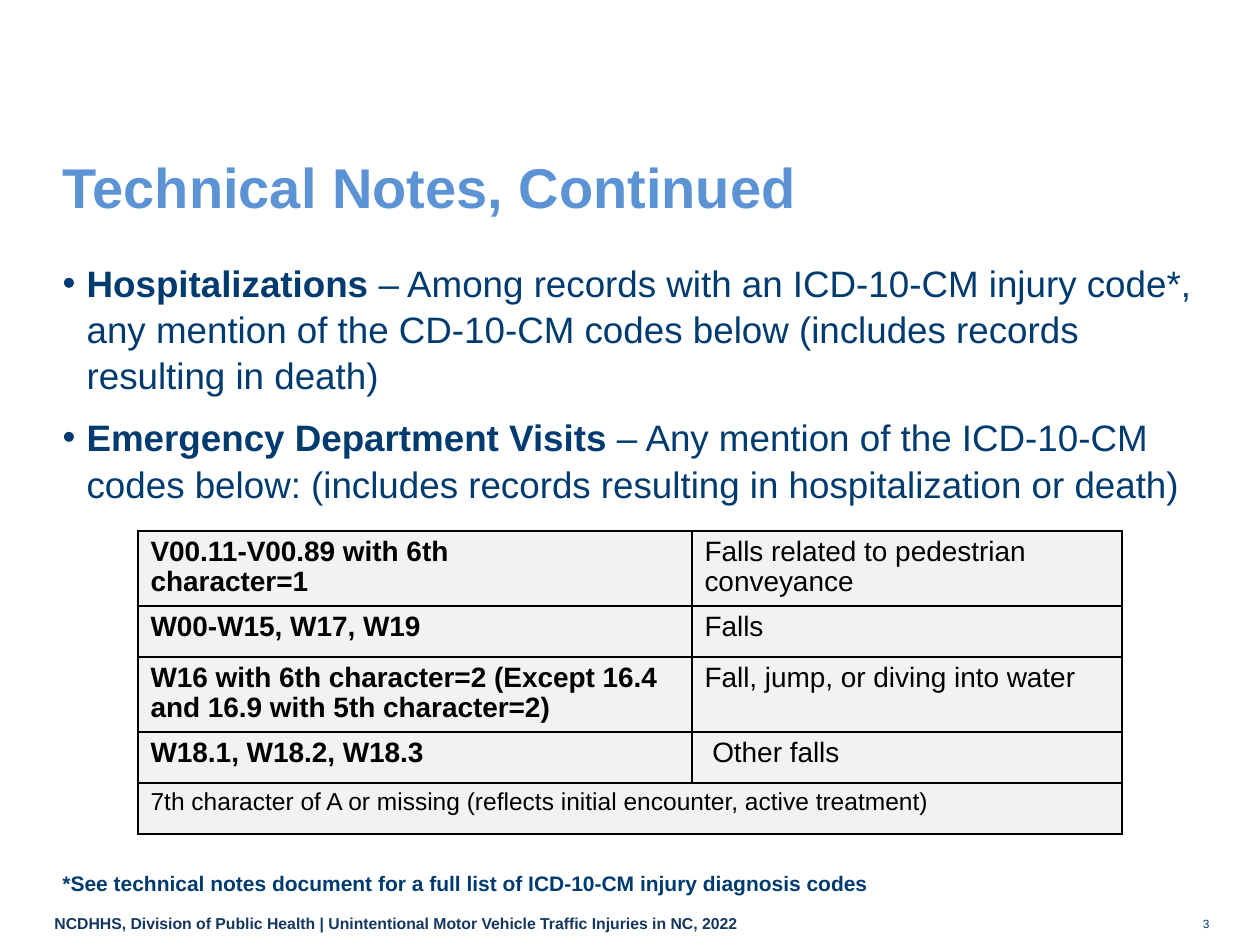
import pptx
import pptx.dml.color
import pptx.enum.text
import pptx.oxml.ns
import pptx.util
import lxml.etree

PIXELS_PER_INCH = 126
FONT = "Arial"
NAVY = pptx.dml.color.RGBColor(0x00, 0x3B, 0x70)
FOOTER_NAVY = pptx.dml.color.RGBColor(0x15, 0x36, 0x5E)
SKY = pptx.dml.color.RGBColor(0x5C, 0x93, 0xD5)
BLACK = pptx.dml.color.RGBColor(0x00, 0x00, 0x00)
PALE_GRAY = pptx.dml.color.RGBColor(0xF2, 0xF2, 0xF2)
ALIGN = pptx.enum.text.PP_ALIGN
ANCHOR = pptx.enum.text.MSO_ANCHOR


def px(length):
    return round(length * pptx.util.Inches(1) / PIXELS_PER_INCH)


def add_element(parent, tag, **attributes):
    element = lxml.etree.SubElement(parent, pptx.oxml.ns.qn(tag))
    for name, value in attributes.items():
        element.set(name, str(value))
    return element


def write_paragraph(paragraph, runs, size, color=NAVY, align=ALIGN.LEFT,
                    line_spacing=None, space_before=0, bullet_indent=None):
    """Fill a paragraph with (text, bold) runs."""
    paragraph.alignment = align
    paragraph.space_before = pptx.util.Pt(space_before)
    if line_spacing:
        paragraph.line_spacing = line_spacing
    if bullet_indent:
        properties = paragraph._p.get_or_add_pPr()
        properties.set("marL", str(px(bullet_indent)))
        properties.set("indent", str(-px(bullet_indent)))
        add_element(properties, "a:buFont", typeface=FONT)
        add_element(properties, "a:buChar", char="•")
    for text, bold in runs:
        run = paragraph.add_run()
        run.text = text
        run.font.name = FONT
        run.font.size = pptx.util.Pt(size)
        run.font.bold = bold
        run.font.color.rgb = color


class SlideBuilder:
    def __init__(self, presentation):
        self.slide = presentation.slides.add_slide(presentation.slide_layouts[1])

    def fill_frame(self, shape, paragraphs, anchor, space_between=0, **style):
        frame = shape.text_frame
        frame.word_wrap = True
        frame.auto_size = pptx.enum.text.MSO_AUTO_SIZE.NONE
        frame.vertical_anchor = anchor
        for index, runs in enumerate(paragraphs):
            paragraph = frame.add_paragraph() if index else frame.paragraphs[0]
            write_paragraph(paragraph, runs, space_before=space_between if index else 0, **style)

    def placeholder(self, number, box, paragraphs, anchor=ANCHOR.TOP, **style):
        shape = self.slide.placeholders[number]
        shape.left, shape.top, shape.width, shape.height = map(px, box)
        self.fill_frame(shape, paragraphs, anchor, **style)

    def text(self, box, text, bold=True, anchor=ANCHOR.TOP, **style):
        shape = self.slide.shapes.add_textbox(*map(px, box))
        self.fill_frame(shape, [[(text, bold)]], anchor, **style)

    def table(self, left, top, widths, heights, rows, note):
        shape = self.slide.shapes.add_table(
            len(heights), len(widths), px(left), px(top), px(sum(widths)), px(sum(heights)))
        table = shape.table
        table.first_row = table.horz_banding = False
        for column, width in zip(table.columns, widths):
            column.width = px(width)
        for row, height in zip(table.rows, heights):
            row.height = px(height)
        for row_index, row in enumerate(rows):
            for column_index, lines in enumerate(row):
                self.cell(table.cell(row_index, column_index), lines, column_index == 0, 16)
        # The note spans the whole last row
        last = len(rows)
        table.cell(last, 0).merge(table.cell(last, len(widths) - 1))
        self.cell(table.cell(last, 0), [note], False, 14)
        self.cell(table.cell(last, 1), [], False, 14)

    def cell(self, cell, lines, bold, size):
        properties = cell._tc.get_or_add_tcPr()
        for side in ("L", "R", "T", "B"):
            line = add_element(properties, f"a:ln{side}", w=pptx.util.Pt(1))
            add_element(add_element(line, "a:solidFill"), "a:srgbClr", val=BLACK)
        cell.fill.solid()
        cell.fill.fore_color.rgb = PALE_GRAY
        for index, line in enumerate(lines):
            frame = cell.text_frame
            paragraph = frame.add_paragraph() if index else frame.paragraphs[0]
            write_paragraph(paragraph, [(line, bold)], size, color=BLACK, line_spacing=0.97)


def main():
    presentation = pptx.Presentation()
    presentation.slide_width = pptx.util.Inches(10)
    presentation.slide_height = pptx.util.Inches(7.5)
    builder = SlideBuilder(presentation)

    # Title and definitions
    builder.placeholder(0, (50, 151, 1181, 76), [[("Technical Notes, Continued", True)]],
                        anchor=ANCHOR.BOTTOM, size=32, color=SKY, line_spacing=0.9)
    definitions = [
        [("Hospitalizations ", True),
         ("– Among records with an ICD-10-CM injury code*, any mention of the CD-10-CM "
          "codes below (includes records resulting in death)", False)],
        [("Emergency Department Visits ", True),
         ("– Any mention of the ICD-10-CM codes below: (includes records resulting in "
          "hospitalization or death)", False)],
    ]
    builder.placeholder(1, (50, 252, 1181, 571), definitions, size=21,
                        line_spacing=1.05, space_between=9, bullet_indent=24)

    # Injury code table
    codes = [
        (["V00.11-V00.89 with 6th", "character=1"], ["Falls related to pedestrian conveyance"]),
        (["W00-W15, W17, W19"], ["Falls"]),
        (["W16 with 6th character=2 (Except 16.4 and 16.9 with 5th character=2)"],
         ["Fall, jump, or diving into water"]),
        (["W18.1, W18.2, W18.3"], [" Other falls"]),
    ]
    builder.table(138, 531, (554, 430), (75, 51, 75, 51, 51), codes,
                  "7th character of A or missing (reflects initial encounter, active treatment)")

    # Footnote, footer and slide number
    builder.text((50, 857, 1113, 45),
                 "*See technical notes document for a full list of ICD-10-CM injury diagnosis codes",
                 anchor=ANCHOR.BOTTOM, size=12)
    builder.text((42, 908, 1101, 37),
                 "NCDHHS, Division of Public Health | Unintentional Motor Vehicle Traffic "
                 "Injuries in NC, 2022", size=9, color=FOOTER_NAVY)
    builder.text((1144, 910, 78, 39), "3", bold=False, size=6.8, align=ALIGN.RIGHT)

    presentation.save("out.pptx")


if __name__ == "__main__":
    main()
